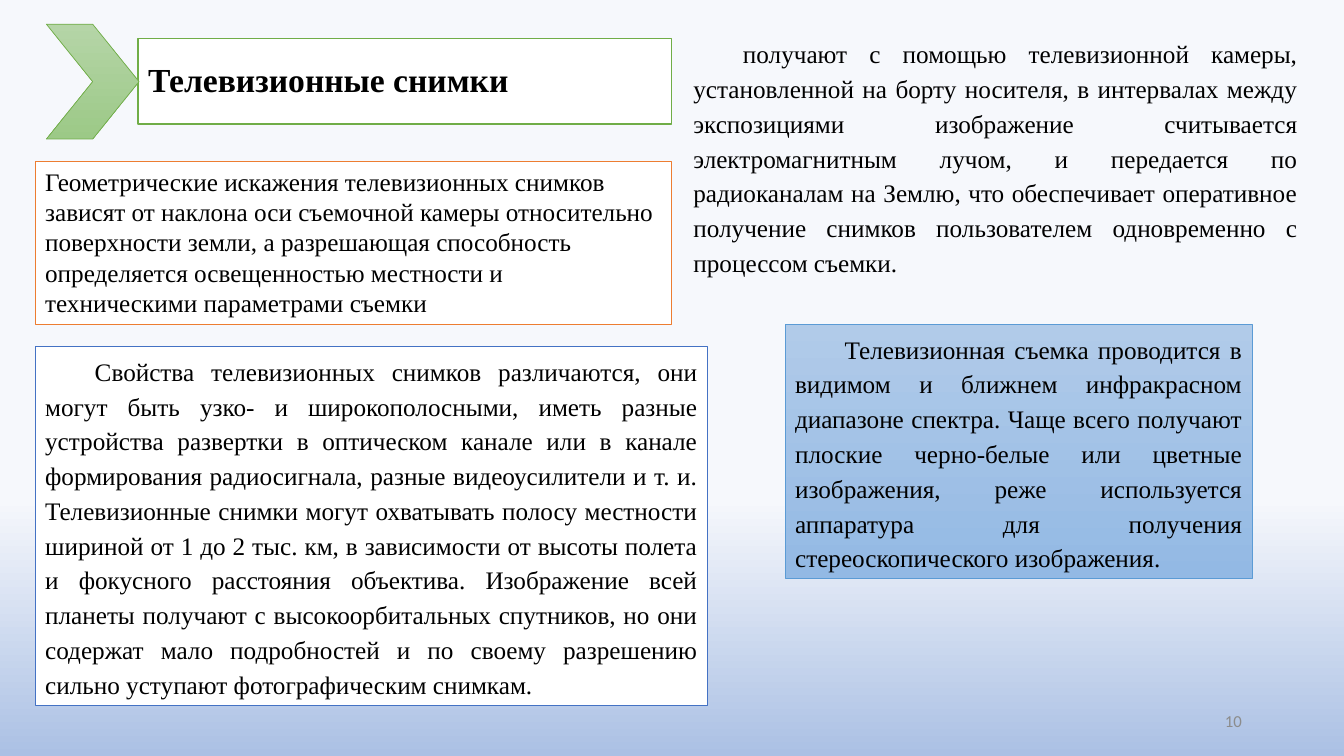
"""Build the slide about television survey images."""
from dataclasses import dataclass

from pptx import Presentation
from pptx.dml.color import RGBColor
from pptx.dml.fill import FillFormat
from pptx.enum.shapes import MSO_SHAPE
from pptx.enum.text import MSO_ANCHOR, MSO_AUTO_SIZE, PP_ALIGN
from pptx.shapes.autoshape import Shape
from pptx.slide import Slide
from pptx.util import Pt

SERIF = "Times New Roman"


@dataclass(frozen=True)
class Box:
    left: float
    top: float
    width: float
    height: float


@dataclass(frozen=True)
class Panel:
    box: Box
    text: str = ""
    colors: tuple[str, ...] = ()
    line: str = ""
    line_width: float = 1
    justified: bool = True
    preset: MSO_SHAPE = MSO_SHAPE.RECTANGLE


TITLE_BOX = Box(98.6, 27.4, 380.9, 61.2)
NUMBER_BOX = Box(678.2, 500.4, 216, 28.8)
PANELS = (
    Panel(Box(33.1, 17.3, 66.2, 82.1), colors=("B5D5A7", "9CC987"),
          line="70AD47", line_width=0.5, preset=MSO_SHAPE.CHEVRON),
    Panel(Box(488.2, 20.9, 445.7, 181.4),
          "получают с помощью телевизионной камеры, установленной на борту "
          "носителя, в интервалах между экспозициями изображение считывается "
          "электромагнитным лучом, и передается по радиоканалам на Землю, что "
          "обеспечивает оперативное получение снимков пользователем "
          "одновременно с процессом съемки."),
    Panel(Box(25.2, 115.2, 454.5, 116.6),
          "Геометрические искажения телевизионных снимков зависят от наклона "
          "оси съемочной камеры относительно поверхности земли, а разрешающая "
          "способность определяется освещенностью местности и техническими "
          "параметрами съемки",
          ("FFFFFF",), "ED7D31", justified=False),
    Panel(Box(25.2, 247.7, 480.2, 256.3),
          "Свойства телевизионных снимков различаются, они могут быть узко- и "
          "широкополосными, иметь разные устройства развертки в оптическом "
          "канале или в канале формирования радиосигнала, разные "
          "видеоусилители и т. и. Телевизионные снимки могут охватывать полосу "
          "местности шириной от 1 до 2 тыс. км, в зависимости от высоты полета "
          "и фокусного расстояния объектива. Изображение всей планеты получают "
          "с высокоорбитальных спутников, но они содержат мало подробностей и "
          "по своему разрешению сильно уступают фотографическим снимкам.",
          ("FFFFFF",), "4472C4"),
    Panel(Box(560.9, 231.8, 333.4, 181.4),
          "Телевизионная съемка проводится в видимом и ближнем инфракрасном "
          "диапазоне спектра. Чаще всего получают плоские черно-белые или "
          "цветные изображения, реже используется аппаратура для получения "
          "стереоскопического изображения.",
          ("B1CBE9", "93B9E4"), "5B9BD5", 0.5),
)


def color(value: str) -> RGBColor:
    return RGBColor.from_string(value)


def paint(fill: FillFormat, colors: tuple[str, ...], start: float = 0) -> None:
    if len(colors) == 1:
        fill.solid()
        fill.fore_color.rgb = color(colors[0])
        return
    fill.gradient()
    fill.gradient_angle = 270
    for stop, position, value in zip(fill.gradient_stops, (start, 1), colors):
        stop.position = position
        stop.color.rgb = color(value)


def outline(shape: Shape, value: str, width: float) -> None:
    shape.line.color.rgb = color(value)
    shape.line.width = Pt(width)


def write(shape: Shape, text: str, size: float, font: str = SERIF,
          value: str = "000000", bold: bool = False,
          align: PP_ALIGN = PP_ALIGN.LEFT,
          anchor: MSO_ANCHOR = MSO_ANCHOR.MIDDLE) -> None:
    frame = shape.text_frame
    frame.text = text
    frame.word_wrap = True
    frame.auto_size = MSO_AUTO_SIZE.NONE
    frame.vertical_anchor = anchor
    para = frame.paragraphs[0]
    para.alignment = align
    span = para.runs[0]
    span.font.name = font
    span.font.size = Pt(size)
    span.font.bold = bold
    span.font.color.rgb = color(value)


def lengths(box: Box) -> tuple[Pt, Pt, Pt, Pt]:
    return Pt(box.left), Pt(box.top), Pt(box.width), Pt(box.height)


def add_title(page: Slide) -> None:
    title = page.shapes.title
    title.left, title.top, title.width, title.height = lengths(TITLE_BOX)
    paint(title.fill, ("FFFFFF",))
    outline(title, "70AD47", 1)
    write(title, "Телевизионные снимки", 24, bold=True)
    title.text_frame.paragraphs[0].line_spacing = 0.9


def add_panel(page: Slide, panel: Panel) -> None:
    if panel.colors:
        shape = page.shapes.add_shape(panel.preset, *lengths(panel.box))
        shape.shadow.inherit = False
        paint(shape.fill, panel.colors)
        outline(shape, panel.line, panel.line_width)
    else:
        shape = page.shapes.add_textbox(*lengths(panel.box))
    if not panel.text:
        return
    align = PP_ALIGN.JUSTIFY if panel.justified else PP_ALIGN.LEFT
    write(shape, panel.text, 18, align=align, anchor=MSO_ANCHOR.TOP)
    shape.text_frame.auto_size = MSO_AUTO_SIZE.SHAPE_TO_FIT_TEXT
    if panel.justified:
        para = shape.text_frame.paragraphs[0]
        para.line_spacing = 1.15
        para.space_after = Pt(10)
        para._p.get_or_add_pPr().set("indent", str(Pt(35.4)))


def main() -> None:
    deck = Presentation()
    deck.slide_width, deck.slide_height = Pt(960), Pt(540)
    page = deck.slides.add_slide(deck.slide_layouts[5])
    paint(page.background.fill, ("F6F8FC", "ABC0E4"), start=0.66)
    add_title(page)
    number = page.shapes.add_textbox(*lengths(NUMBER_BOX))
    write(number, "10", 12, "Calibri", "8C8C8C", align=PP_ALIGN.RIGHT)
    for panel in PANELS:
        add_panel(page, panel)
    deck.save("out.pptx")


if __name__ == "__main__":
    main()
